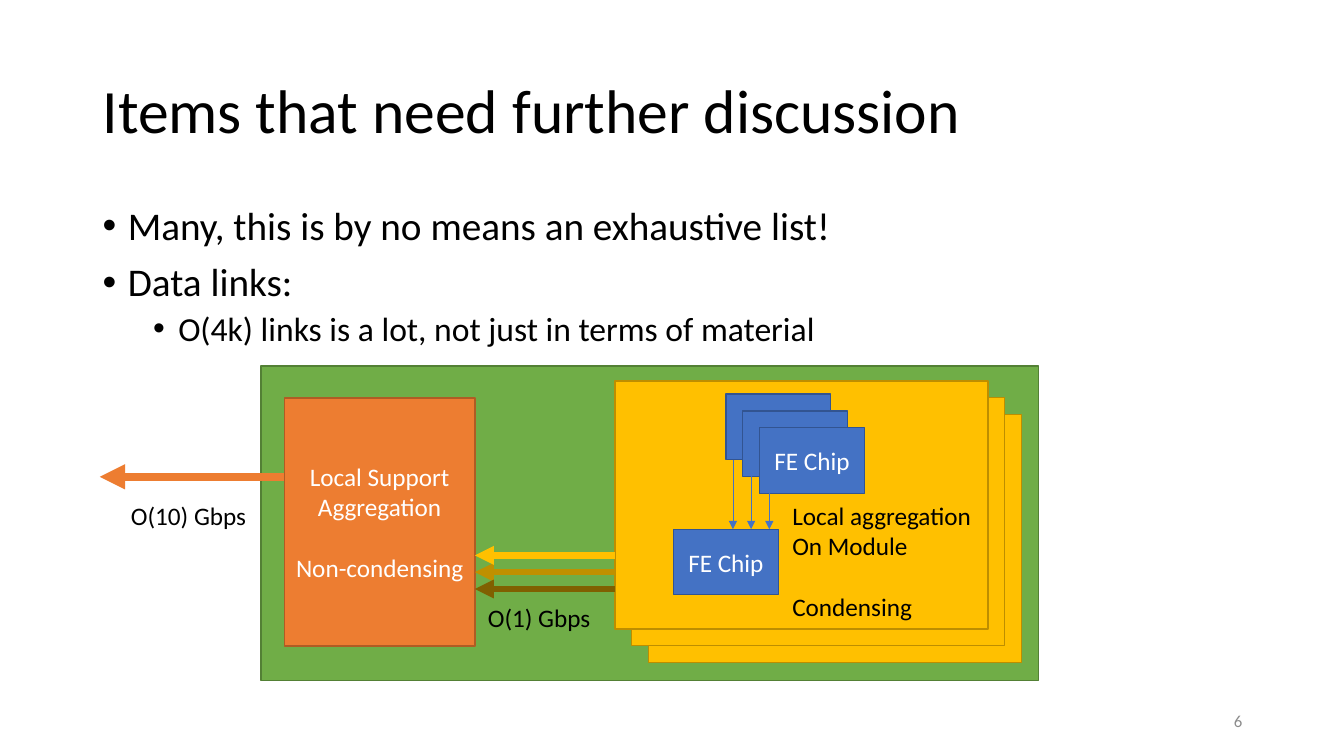
from dataclasses import dataclass
from typing import NamedTuple

from lxml.etree import SubElement
from pptx import Presentation
from pptx.dml.color import RGBColor
from pptx.enum.shapes import MSO_CONNECTOR, MSO_SHAPE
from pptx.enum.text import MSO_ANCHOR, PP_ALIGN
from pptx.oxml.ns import qn
from pptx.util import Inches, Pt


@dataclass(frozen=True)
class Theme:
    """Colours, font and type sizes of the slide."""
    font: str = "Calibri"
    ink: str = "000000"
    paper: str = "FFFFFF"
    muted: str = "8C8C8C"
    support: tuple = ("70AD47", "538035")
    module: tuple = ("FFC000", "BD8E00")
    chip: tuple = ("4472C4", "325491")
    aggregation: tuple = ("ED7D31", "AF5C24")
    links: tuple = ("FFC000", "BF9000", "806000")
    title: int = 44
    bullet: int = 28
    sub_bullet: int = 24
    label: int = 18
    number: int = 12


THEME = Theme()
STACK_STEP = 1 / 6


class Box(NamedTuple):
    """A rectangle in inches."""
    left: float
    top: float
    width: float
    height: float

    def inner(self, dx, dy, width, height):
        """Return a box placed relative to this one's corner."""
        return Box(self.left + dx, self.top + dy, width, height)

    def lengths(self):
        """Return the four lengths for python-pptx."""
        return [Inches(value) for value in self]


def apply_format(target, values):
    """Set each named format value on the target."""
    for name, value in values.items():
        setattr(target, name, value)


def write(frame, lines, size, color, **paragraph_format):
    """Write one paragraph per line; a (text, format) pair adds its own format."""
    for index, line in enumerate(lines):
        text, extra = (line, {}) if isinstance(line, str) else line
        paragraph = frame.paragraphs[0] if index == 0 else frame.add_paragraph()
        apply_format(paragraph, {**paragraph_format, **extra})
        run = paragraph.add_run()
        run.text = text
        apply_format(run.font, {"name": THEME.font, "size": Pt(size)})
        run.font.color.rgb = RGBColor.from_string(color)


def add_label(slide, box, lines, size=THEME.label, color=THEME.ink,
              anchor=MSO_ANCHOR.TOP, wrap=True, **paragraph_format):
    """Add a text box and return its frame."""
    frame = slide.shapes.add_textbox(*box.lengths()).text_frame
    apply_format(frame, {"word_wrap": wrap, "vertical_anchor": anchor})
    write(frame, lines, size, color, **paragraph_format)
    return frame


def add_block(slide, box, colors, lines=()):
    """Add an outlined rectangle with centred text."""
    block = slide.shapes.add_shape(MSO_SHAPE.RECTANGLE, *box.lengths())
    block.shadow.inherit = False
    fill, outline = colors
    block.fill.solid()
    block.fill.fore_color.rgb = RGBColor.from_string(fill)
    block.line.color.rgb = RGBColor.from_string(outline)
    block.line.width = Pt(1)
    apply_format(block.text_frame, {"word_wrap": True, "vertical_anchor": MSO_ANCHOR.MIDDLE})
    write(block.text_frame, lines, THEME.label, THEME.paper, alignment=PP_ALIGN.CENTER)


def add_arrow(slide, start, end, color, width):
    """Add a straight arrow from start to end."""
    ends = [Inches(value) for value in (*start, *end)]
    arrow = slide.shapes.add_connector(MSO_CONNECTOR.STRAIGHT, *ends)
    arrow.line.color.rgb = RGBColor.from_string(color)
    arrow.line.width = Pt(width)
    SubElement(arrow.line._get_or_add_ln(), qn("a:tailEnd"), type="triangle")
    SubElement(arrow._element.spPr, qn("a:effectLst"))


def add_title(slide, box):
    """Add the slide title."""
    add_label(slide, box, ["Items that need further discussion"], THEME.title,
              anchor=MSO_ANCHOR.MIDDLE, line_spacing=0.9)


def add_bullets(slide, box):
    """Add the bulleted list."""
    frame = add_label(slide, box, ["Many, this is by no means an exhaustive list!", "Data links:"],
                      THEME.bullet, line_spacing=0.9, space_before=Pt(10))
    detail = frame.add_paragraph()
    apply_format(detail, {"level": 1, "line_spacing": 0.9, "space_before": Pt(5)})
    detail_run = detail.add_run()
    detail_run.text = "O(4k) links is a lot, not just in terms of material"
    apply_format(detail_run.font, {"name": THEME.font, "size": Pt(THEME.sub_bullet)})
    detail_run.font.color.rgb = RGBColor.from_string(THEME.ink)
    for paragraph in frame.paragraphs:
        properties = paragraph._p.get_or_add_pPr()
        properties.set("marL", str(Inches(0.25 + 0.5 * paragraph.level)))
        properties.set("indent", str(-Inches(0.25)))
        SubElement(properties, qn("a:buFont"), typeface="Arial")
        SubElement(properties, qn("a:buChar"), char="•")


def add_modules(slide, box):
    """Add the stacked modules with their chips in front."""
    for layer in (2, 1, 0):
        shift = layer * STACK_STEP
        add_block(slide, box.inner(shift, shift, box.width, box.height), THEME.module)
    chip = box.inner(1.1, 0.13, 1.04, 0.65)
    collector = box.inner(0.58, 1.47, chip.width, chip.height)
    for layer, lines in enumerate(([], ["FE Chip"], ["FE Chip"])):
        shift = layer * STACK_STEP
        add_block(slide, chip.inner(shift, shift, chip.width, chip.height), THEME.chip, lines)
    add_block(slide, collector, THEME.chip, ["FE Chip"])
    for layer in range(3):
        x = chip.left + 0.07 + 0.18 * layer
        bottom = chip.top + chip.height + layer * STACK_STEP
        add_arrow(slide, (x, bottom), (x, collector.top), THEME.chip[0], 0.5)
    add_label(slide, box.inner(1.66, 1.13, 2, 1.31),
              ["Local aggregation", "On Module", ("Condensing", {"space_before": Pt(22)})],
              wrap=False)


def add_diagram(slide, box):
    """Add the support with its aggregation block, modules and data links."""
    add_block(slide, box, THEME.support)
    aggregation = box.inner(0.23, 0.32, 1.89, 2.46)
    module = box.inner(3.51, 0.15, 3.7, 2.46)
    add_modules(slide, module)
    add_block(slide, aggregation, THEME.aggregation,
              ["Local Support Aggregation", ("Non-condensing", {"space_before": Pt(22)})])
    for row in (1, 0, 2):
        y = box.top + 1.88 + row * STACK_STEP
        add_arrow(slide, (module.left, y), (aggregation.left + aggregation.width, y),
                  THEME.links[row], 4.5)
    output_y = box.top + 1.1
    add_arrow(slide, (aggregation.left, output_y), (box.left - 1.6, output_y),
              THEME.aggregation[0], 6)
    add_label(slide, box.inner(2.15, 2.3, 1.28, 0.4), ["O(1) Gbps"])
    add_label(slide, box.inner(-1.39, 1.28, 1.39, 0.4), ["O(10) Gbps"])


def add_slide_number(slide, box):
    """Add the slide number."""
    add_label(slide, box, ["6"], THEME.number, THEME.muted,
              MSO_ANCHOR.MIDDLE, alignment=PP_ALIGN.RIGHT)


def main():
    """Build and save the slide."""
    deck = Presentation()
    apply_format(deck, {"slide_width": Inches(13.33), "slide_height": Inches(7.5)})
    slide = deck.slides.add_slide(deck.slide_layouts[6])
    add_title(slide, Box(0.92, 0.4, 11.5, 1.45))
    add_bullets(slide, Box(0.92, 2, 11.5, 1.5))
    add_diagram(slide, Box(2.59, 3.63, 7.71, 3.12))
    add_slide_number(slide, Box(9.42, 6.95, 3, 0.4))
    deck.save("out.pptx")


if __name__ == "__main__":
    main()
